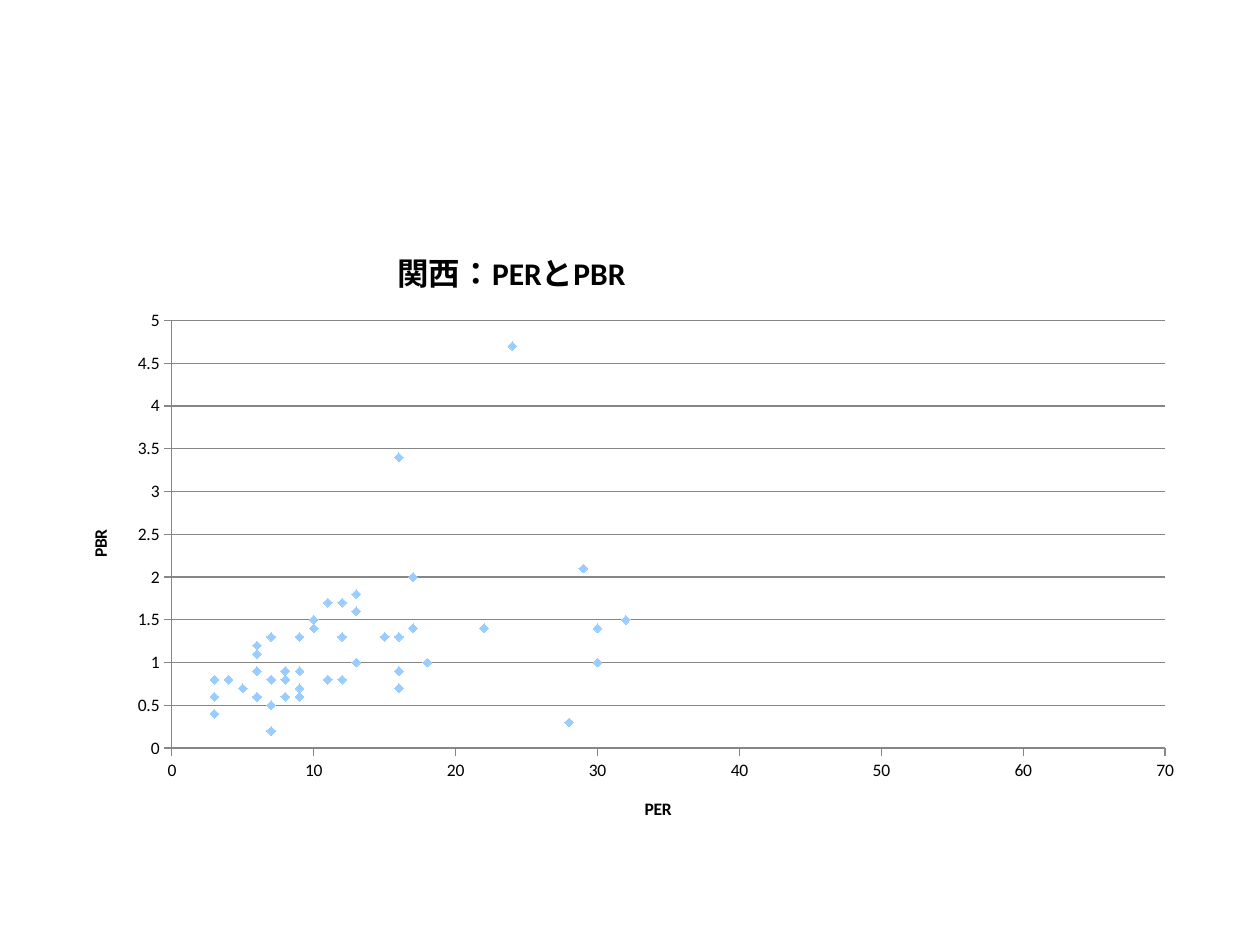
from lxml import etree
from pptx import Presentation
from pptx import util as u
from pptx.chart.data import XyChartData
from pptx.dml.color import RGBColor
from pptx.enum import chart as ch
from pptx.enum import lang
from pptx.oxml.ns import qn

BLACK = RGBColor(0x00, 0x00, 0x00)
GREY = RGBColor(0x86, 0x86, 0x86)
SKY = RGBColor(0x99, 0xCC, 0xFF)
FONT = "Calibri"

# (PER, PBR) of each company
RATIOS = [
    (12, 1.7), (9, 0.6), (16, 1.3), (16, 0.7), (8, 0.8), (29, 2.1),
    (9, 0.9), (16, 0.9), (11, 0.8), (17, 2), (30, 1), (7, 0.2),
    (11, 1.7), (7, 0.5), (7, 0.5), (13, 1), (18, 1), (17, 1.4),
    (3, 0.6), (16, 0.9), (7, 0.5), (28, 0.3), (4, 0.8), (9, 0.7),
    (7, 1.3), (6, 0.6), (8, 0.8), (32, 1.5), (6, 1.1), (16, 3.4),
    (7, 0.8), (12, 0.8), (7, 0.8), (13, 1.8), (5, 0.7), (10, 1.5),
    (11, 0.8), (13, 1.6), (24, 4.7), (9, 1.3), (12, 1.3), (22, 1.4),
    (8, 0.6), (3, 0.4), (6, 1.2), (6, 0.6), (8, 0.9), (30, 1.4),
    (15, 1.3), (6, 0.9), (8, 0.9), (3, 0.8), (10, 1.4),
]


def place(part, **fractions):
    """Fix a chart part at fractions of the chart's size."""
    layout = part.find(qn("c:layout"))
    if layout is None:
        layout = etree.Element(qn("c:layout"))
        part.insert(0, layout)
    manual = etree.SubElement(layout, qn("c:manualLayout"))
    if "w" in fractions:
        etree.SubElement(manual, qn("c:layoutTarget")).set("val", "inner")
    for key in ("x", "y"):
        etree.SubElement(manual, qn(f"c:{key}Mode")).set("val", "edge")
    for key, value in fractions.items():
        etree.SubElement(manual, qn(f"c:{key}")).set("val", str(value))


def write(title, wording, size=10, bold=True, x=0, y=0):
    """Write a chart or axis title and place it."""
    run = title.text_frame.paragraphs[0].add_run()
    run.text = wording
    run.font.name = FONT
    run.font.size = u.Pt(size)
    run.font.bold = bold
    run.font.color.rgb = BLACK
    run.font.language_id = lang.MSO_LANGUAGE_ID.JAPANESE
    place(title._element, x=x, y=y)


deck = Presentation()
deck.slide_width, deck.slide_height = u.Cm(25.4), u.Cm(19.05)
slide = deck.slides.add_slide(deck.slide_layouts[6])

# Scatter chart
ratios = XyChartData()
companies = ratios.add_series("Series 1")
for per, pbr in RATIOS:
    companies.add_data_point(per, pbr)
scatter = slide.shapes.add_chart(
    ch.XL_CHART_TYPE.XY_SCATTER, u.Cm(1.27), u.Cm(4.45), u.Cm(22.86), u.Cm(12.57), ratios
).chart
scatter.has_legend = False
scatter.font.name = FONT
scatter.font.size = u.Pt(10)
scatter.font.color.rgb = BLACK
scatter.plots[0].vary_by_categories = False
place(scatter._chartSpace.chart.plotArea, x=0.096, y=0.16, w=0.876, h=0.686)

# Diamond markers without a joining line
points = scatter.plots[0].series[0]
points.smooth = False
points.format.line.fill.background()
points.marker.style = ch.XL_MARKER_STYLE.DIAMOND
points.marker.size = 5
points.marker.format.fill.solid()
points.marker.format.fill.fore_color.rgb = SKY
points.marker.format.line.fill.background()

# Axes
per_axis, pbr_axis = scatter.category_axis, scatter.value_axis
for axis, top, step in ((per_axis, 70, 10), (pbr_axis, 5, 0.5)):
    axis.minimum_scale, axis.maximum_scale, axis.major_unit = 0, top, step
    axis.major_tick_mark = ch.XL_TICK_MARK.OUTSIDE
    axis.minor_tick_mark = ch.XL_TICK_MARK.NONE
    axis.tick_labels.number_format = "General"
    axis.tick_labels.number_format_is_linked = False
    axis.has_major_gridlines = axis is pbr_axis
    axis.format.line.color.rgb = GREY
    axis.format.line.width = u.Pt(0.75)
pbr_axis.major_gridlines.format.line.color.rgb = GREY
pbr_axis.major_gridlines.format.line.width = u.Pt(0.75)

# Titles
scatter.has_title = True
write(scatter.chart_title, "関西：PERとPBR", size=18, x=0.29, y=0.03)
write(per_axis.axis_title, "PER", x=0.51, y=0.92)
write(pbr_axis.axis_title, "PBR", x=0.02, y=0.49)
pbr_axis.axis_title.text_frame._txBody.bodyPr.set("rot", "-5400000")

deck.save("out.pptx")
